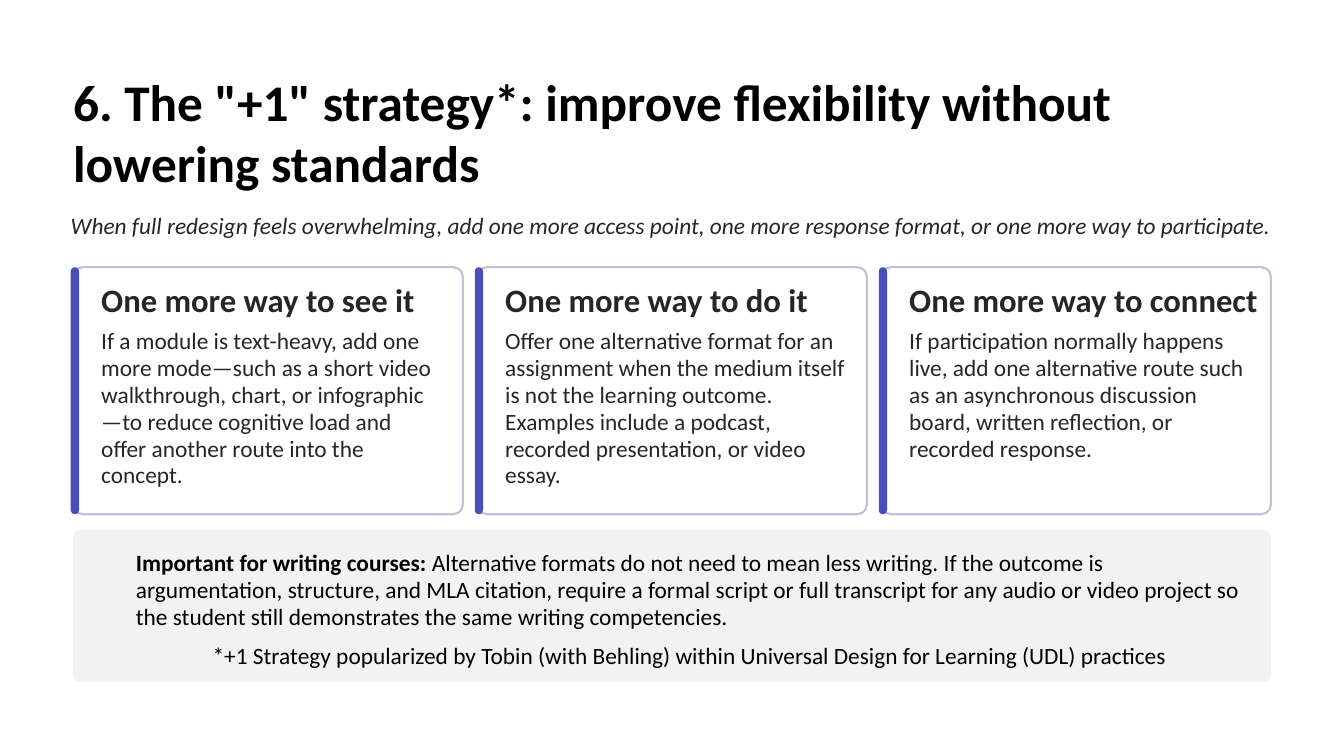
from pptx import Presentation
from pptx.dml.color import RGBColor
from pptx.enum.shapes import MSO_SHAPE
from pptx.util import Cm, Pt

BLACK = RGBColor(0x00, 0x00, 0x00)
WHITE = RGBColor(0xFF, 0xFF, 0xFF)
INK = RGBColor(0x27, 0x25, 0x25)
INDIGO = RGBColor(0x49, 0x50, 0xBC)
LAVENDER = RGBColor(0xC0, 0xC1, 0xD7)
PALE_GREY = RGBColor(0xF2, 0xF2, 0xF2)
FONT = "Calibri"

TITLE = '6. The "+1" strategy*: improve flexibility without lowering standards'
SUBTITLE = (
    "When full redesign feels overwhelming, add one more access point, "
    "one more response format, or one more way to participate."
)
CARDS = [
    (
        "One more way to see it",
        "If a module is text-heavy, add one more mode—such as a short video "
        "walkthrough, chart, or infographic—to reduce cognitive load and "
        "offer another route into the concept.",
    ),
    (
        "One more way to do it",
        "Offer one alternative format for an assignment when the medium itself "
        "is not the learning outcome. Examples include a podcast, recorded "
        "presentation, or video essay.",
    ),
    (
        "One more way to connect",
        "If participation normally happens live, add one alternative route such "
        "as an asynchronous discussion board, written reflection, or recorded "
        "response.",
    ),
]
NOTE_LEAD = "Important for writing courses: "
NOTE = (
    "Alternative formats do not need to mean less writing. If the outcome is "
    "argumentation, structure, and MLA citation, require a formal script or full "
    "transcript for any audio or video project so the student still demonstrates "
    "the same writing competencies."
)
FOOTNOTE = (
    "*+1 Strategy popularized by Tobin (with Behling) within Universal Design "
    "for Learning (UDL) practices"
)


def add_text(slide, left, top, width, height, text, size=20, spacing=23,
             color=INK, bold=False, italic=False, lead=""):
    """Place one paragraph; lead is an optional bold opening."""
    box = slide.shapes.add_textbox(Cm(left), Cm(top), Cm(width), Cm(height))
    frame = box.text_frame
    frame.word_wrap = True
    frame.margin_left = frame.margin_right = 0
    frame.margin_top = frame.margin_bottom = 0
    paragraph = frame.paragraphs[0]
    paragraph.line_spacing = Pt(spacing)
    for content, is_bold in ((lead, True), (text, bold)):
        if content:
            run = paragraph.add_run()
            run.text = content
            run.font.name = FONT
            run.font.size = Pt(size)
            run.font.bold = is_bold
            run.font.italic = italic
            run.font.color.rgb = color


def add_panel(slide, left, top, width, height, rounding, fill, outline=None):
    panel = slide.shapes.add_shape(
        MSO_SHAPE.ROUNDED_RECTANGLE, Cm(left), Cm(top), Cm(width), Cm(height))
    panel.adjustments[0] = rounding
    panel.shadow.inherit = False
    panel.fill.solid()
    panel.fill.fore_color.rgb = fill
    if outline is None:
        panel.line.fill.background()
    else:
        panel.line.color.rgb = outline
        panel.line.width = Pt(1.8)


def add_header(slide, left, top, width):
    add_text(slide, left, top, width, 3.68, TITLE,
             size=44, spacing=52, color=BLACK, bold=True)
    add_text(slide, left - 0.07, top + 4.27, width + 0.5, 0.84, SUBTITLE, italic=True)


def add_card(slide, left, top, width, height, heading, body):
    add_panel(slide, left, top, width, height, 0.04, WHITE, LAVENDER)
    add_panel(slide, left - 0.07, top, 0.25, height, 0.5, INDIGO)
    add_text(slide, left + 0.85, top + 0.64, width - 0.85, 0.91, heading,
             size=28, spacing=26, bold=True)
    add_text(slide, left + 0.85, top + 1.83, width - 1.5, height - 2.5, body)


def add_cards(slide, left, top, width, height, gap):
    card_width = (width - gap * (len(CARDS) - 1)) / len(CARDS)
    for index, (heading, body) in enumerate(CARDS):
        add_card(slide, left + index * (card_width + gap), top,
                 card_width, height, heading, body)


def add_note(slide, left, top, width, height):
    add_panel(slide, left, top, width, height, 0.05, PALE_GREY)
    add_text(slide, left + 1.9, top + 0.58, width - 2.49, 2.5, NOTE,
             color=BLACK, lead=NOTE_LEAD)
    add_text(slide, left + 4.22, top + 3.4, width - 6.5, 0.84, FOOTNOTE, color=BLACK)


def main():
    presentation = Presentation()
    presentation.slide_width = Cm(40.64)
    presentation.slide_height = Cm(22.86)
    slide = presentation.slides.add_slide(presentation.slide_layouts[6])
    slide.background.fill.solid()
    slide.background.fill.fore_color.rgb = WHITE

    left, width = 2.21, 36.22
    add_header(slide, left, 2.16, width)
    add_cards(slide, left, 8.08, width, 7.47, gap=0.43)
    add_note(slide, left, 16.03, width, 4.6)
    presentation.save("out.pptx")


if __name__ == "__main__":
    main()
